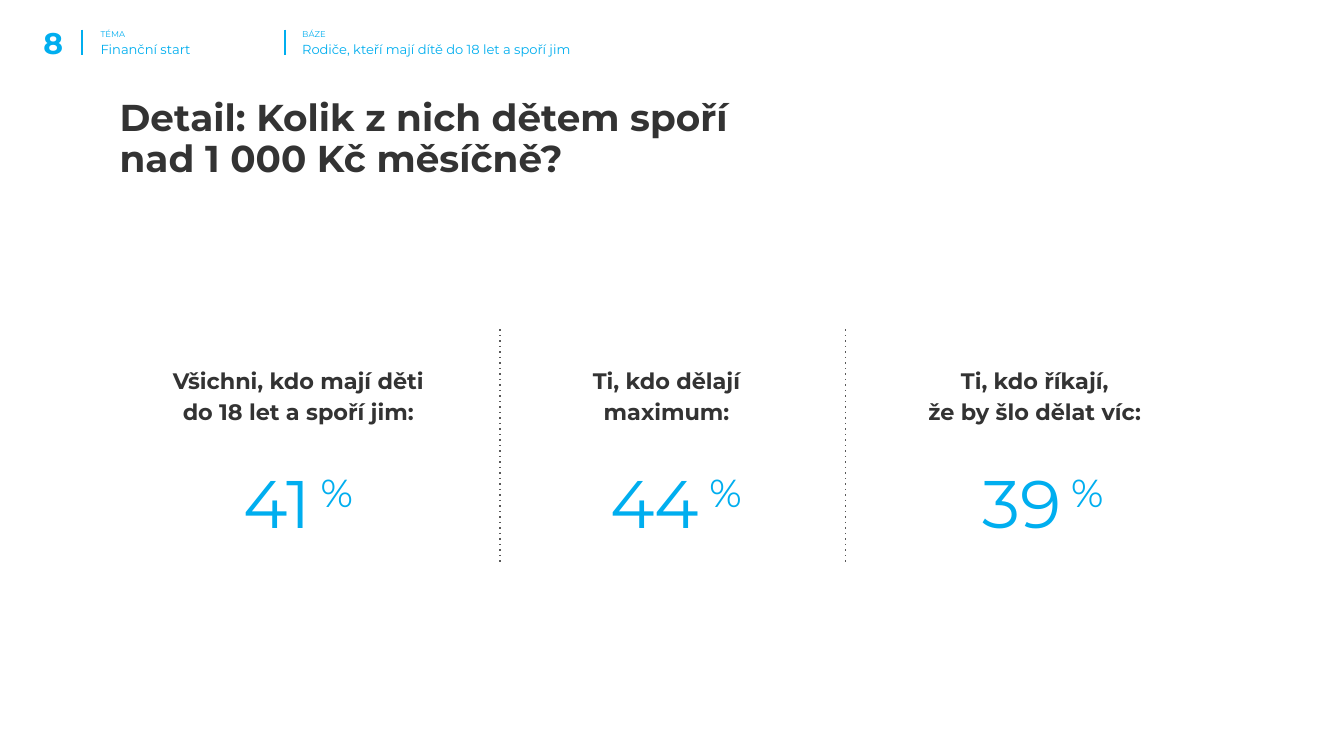
from dataclasses import dataclass

from lxml import etree
from pptx import Presentation
from pptx.dml.color import RGBColor
from pptx.enum import shapes, text
from pptx.oxml import ns
from pptx.util import Inches, Pt


@dataclass(frozen=True)
class Theme:
    font: str = "Montserrat"
    blue: str = "00AEEF"
    dark: str = "333333"
    gray: str = "595959"
    page: float = 16
    title: float = 20
    tag: float = 4.5
    topic: float = 7
    label: float = 12
    value: float = 36


THEME = Theme()
LEFT, MID, RIGHT = text.PP_ALIGN.LEFT, text.PP_ALIGN.CENTER, text.PP_ALIGN.RIGHT
TOP, BOTTOM = text.MSO_ANCHOR.TOP, text.MSO_ANCHOR.BOTTOM


def fill(shape, parts, size, color, bold=False, align=LEFT, space=1.0,
         pads=(0.1, 0.1, 0.1, 0.1), anchor=TOP):
    frame = shape.text_frame
    frame.word_wrap = True
    frame.auto_size = text.MSO_AUTO_SIZE.NONE
    frame.vertical_anchor = anchor
    frame.margin_left, frame.margin_top, frame.margin_right, frame.margin_bottom = map(Inches, pads)
    para = frame.paragraphs[0]
    para.alignment = align
    para.line_spacing = space
    para.space_before = Pt(0)
    para.text = parts[0]
    for part in parts[1:]:
        para.add_run().text = part
    for run in para.runs:
        run.font.name = THEME.font
        run.font.size = Pt(size)
        run.font.bold = bold
        run.font.color.rgb = RGBColor.from_string(color)
    return para


def write(slide, box, parts, size, color, **style):
    shape = slide.shapes.add_textbox(*map(Inches, box))
    return fill(shape, parts, size, color, **style)


def rule(slide, x, top, tall, color, dots=False):
    line = slide.shapes.add_connector(
        shapes.MSO_CONNECTOR.STRAIGHT,
        Inches(x), Inches(top), Inches(x), Inches(top + tall))
    line.line.color.rgb = RGBColor.from_string(color)
    line.line.width = Pt(0.75)
    if dots:
        etree.SubElement(line.line._get_or_add_ln(), ns.qn("a:prstDash"), val="dot")
    etree.SubElement(line._element.spPr, ns.qn("a:effectLst"))


def add_page(slide, box, number):
    write(slide, box, [number], THEME.page, THEME.blue, bold=True,
          align=RIGHT, pads=(0.1, 0.1, 0, 0), anchor=BOTTOM)


def add_topic(slide, box, tag, name, gap):
    x, y, w, h = box
    rule(slide, x, y + 0.1, 0.19, THEME.blue)
    write(slide, (x + gap, y, 0.63, h), [tag], THEME.tag, THEME.blue)
    write(slide, (x + gap, y + 0.09, w - gap, 0.29), [name], THEME.topic, THEME.blue)


def add_title(slide, box, words):
    shape = slide.shapes.title
    shape.left, shape.top, shape.width, shape.height = map(Inches, box)
    fill(shape, [words], THEME.title, THEME.dark, bold=True, space=0.9)


def add_stat(slide, box, label, value, shift):
    x, y, w, h = box
    write(slide, (x, y, w, 0.6), [label], THEME.label, THEME.dark, bold=True,
          align=MID, space=1.15, pads=(0, 0, 0, 0))
    wide = 1.07
    para = write(slide, (x + (w - wide) / 2 + shift, y + 0.64, wide, h - 0.64),
                 [value, " %"], THEME.value, THEME.blue,
                 align=MID, space=1.15, pads=(0, 0, 0, 0))
    para.runs[1]._r.get_or_add_rPr().set("baseline", "30000")


def add_stats(slide, box, stats):
    x, y, w, h = box
    step = w / len(stats)
    for i, (wide, *stat) in enumerate(stats):
        left = x + (i + 0.5) * step - wide / 2
        add_stat(slide, (left, y + 0.25, wide, 1.31), *stat)
    for gap in (2.87, 5.44):
        rule(slide, x + gap, y, h, THEME.gray, dots=True)


def main():
    deck = Presentation()
    deck.slide_width = Inches(10)
    deck.slide_height = deck.slide_width * 9 // 16
    slide = deck.slides.add_slide(deck.slide_layouts[5])
    add_page(slide, (0, 0, 0.47, 0.45), "8")
    add_topic(slide, (0.61, 0.12, 1.11, 0.42), "TÉMA", "Finanční start", 0.04)
    add_topic(slide, (2.12, 0.12, 3.24, 0.42), "BÁZE",
              "Rodiče, kteří mají dítě do 18 let a spoří jim", 0.03)
    add_title(slide, (0.79, 0.64, 7.73, 0.5),
              "Detail: Kolik z nich dětem spoří\vnad 1 000 Kč měsíčně?")
    add_stats(slide, (0.85, 2.45, 8.22, 1.73), [
        (2, "Všichni, kdo mají děti do 18 let a spoří jim:", "41", 0),
        (2.1, "Ti, kdo dělají\vmaximum:", "44", 0.07),
        (2.1, "Ti, kdo říkají,\vže by šlo dělat víc:", "39", 0.06),
    ])
    deck.save("out.pptx")


if __name__ == "__main__":
    main()
